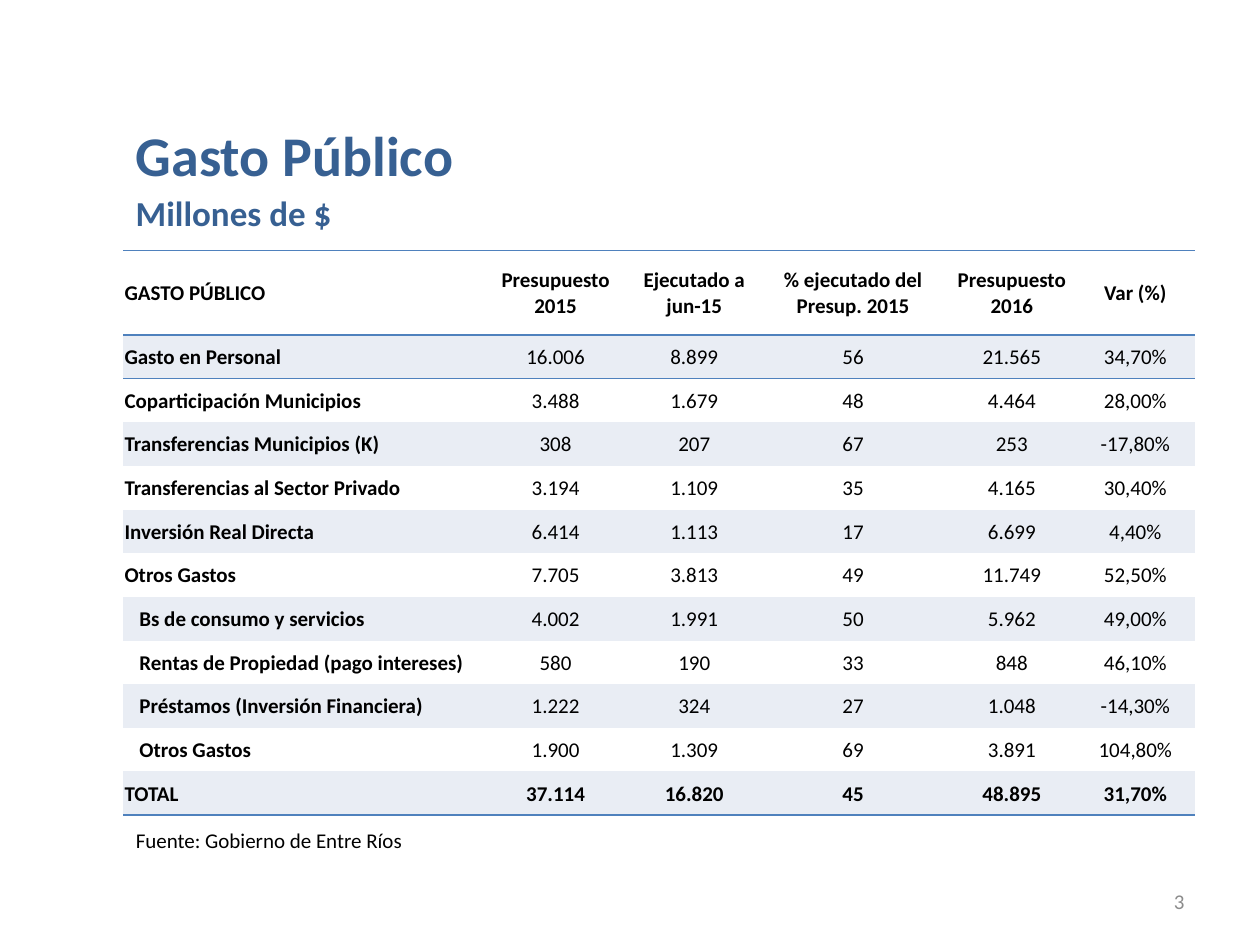
from lxml.etree import SubElement
from pptx import Presentation
from pptx.dml.color import RGBColor
from pptx.enum.text import MSO_ANCHOR as Anchor, MSO_AUTO_SIZE as AutoSize, PP_ALIGN as Align
from pptx.oxml.ns import qn
from pptx.util import Pt

FONT = "Calibri"
COLORS = {"heading": "376092", "text": "000000", "number": "8C8C8C",
          "rule": "4F81BD", "band": "E9EDF4"}
NO_STYLE_NO_GRID = "{2D5ABB26-0587-4C30-8999-92F81FD0307C}"
LEFT = 70.5
SUBITEM_INDENT = 8.5

COLUMN_WIDTHS = [204.5, 85, 73.5, 108, 73.5, 67.7]
HEADER_HEIGHT, ROW_HEIGHT = 48.2, 24.95
HEADERS = ["GASTO PÚBLICO", "Presupuesto 2015", "Ejecutado a jun-15",
           "% ejecutado del Presup. 2015", "Presupuesto 2016", "Var (%)"]
SPENDING = [
    ["Gasto en Personal", "16.006", "8.899", "56", "21.565", "34,70%"],
    ["Coparticipación Municipios", "3.488", "1.679", "48", "4.464", "28,00%"],
    ["Transferencias Municipios (K)", "308", "207", "67", "253", "-17,80%"],
    ["Transferencias al Sector Privado", "3.194", "1.109", "35", "4.165", "30,40%"],
    ["Inversión Real Directa", "6.414", "1.113", "17", "6.699", "4,40%"],
    ["Otros Gastos", "7.705", "3.813", "49", "11.749", "52,50%"],
]
OTHER_SPENDING = [
    ["Bs de consumo y servicios", "4.002", "1.991", "50", "5.962", "49,00%"],
    ["Rentas de Propiedad (pago intereses)", "580", "190", "33", "848", "46,10%"],
    ["Préstamos (Inversión Financiera)", "1.222", "324", "27", "1.048", "-14,30%"],
    ["Otros Gastos", "1.900", "1.309", "69", "3.891", "104,80%"],
]
TOTAL = ["TOTAL", "37.114", "16.820", "45", "48.895", "31,70%"]


def write(frame, text, size, color, bold=False, align=Align.LEFT):
    frame.text = text
    paragraph = frame.paragraphs[0]
    paragraph.alignment = align
    font = paragraph.font
    font.name, font.size, font.bold = FONT, Pt(size), bold
    font.color.rgb = RGBColor.from_string(COLORS[color])


def add_title(slide, text, left, top, width, height):
    title = slide.shapes.title
    title.left, title.top, title.width, title.height = map(Pt, (left, top, width, height))
    frame = title.text_frame
    frame.word_wrap = True
    frame.auto_size = AutoSize.NONE
    frame.vertical_anchor = Anchor.TOP
    write(frame, text, 32, "heading", bold=True)


def add_text(slide, text, box, size, color, bold=False, align=Align.LEFT, anchor=Anchor.TOP):
    frame = slide.shapes.add_textbox(*map(Pt, box)).text_frame
    frame.word_wrap = True
    frame.vertical_anchor = anchor
    write(frame, text, size, color, bold, align)


def set_rules(cell, sides):
    """Draw the named sides ("lnT", "lnB") of a cell; call before setting its fill."""
    properties = cell._tc.get_or_add_tcPr()
    for side in sides:
        line = SubElement(properties, qn(f"a:{side}"), w=str(Pt(1)))
        fill = SubElement(line, qn("a:solidFill"))
        SubElement(fill, qn("a:srgbClr"), val=COLORS["rule"])


def format_cell(cell, text, bold, align, indent, rules, banded):
    cell.vertical_anchor = Anchor.MIDDLE
    cell.margin_left = Pt(0.7 + indent)
    cell.margin_right = cell.margin_top = Pt(0.7)
    cell.margin_bottom = Pt(0)
    write(cell.text_frame, text, 12, "text", bold, align)
    set_rules(cell, rules)
    if banded:
        cell.fill.solid()
        cell.fill.fore_color.rgb = RGBColor.from_string(COLORS["band"])
    else:
        cell.fill.background()


def add_spending_table(slide, left, top):
    rows = [HEADERS, *SPENDING, *OTHER_SPENDING, TOTAL]
    last = len(rows) - 1
    first_subitem = 1 + len(SPENDING)
    heights = [HEADER_HEIGHT] + [ROW_HEIGHT] * last
    frame = slide.shapes.add_table(len(rows), len(HEADERS), Pt(left), Pt(top),
                                   Pt(sum(COLUMN_WIDTHS)), Pt(sum(heights)))
    table = frame.table
    table._tbl.tblPr.find(qn("a:tableStyleId")).text = NO_STYLE_NO_GRID
    table.horz_banding = False
    for column, width in zip(table.columns, COLUMN_WIDTHS):
        column.width = Pt(width)
    rules = {0: ["lnT", "lnB"], 1: ["lnT"], last: ["lnB"]}
    for r, (values, height) in enumerate(zip(rows, heights)):
        table.rows[r].height = Pt(height)
        for c, value in enumerate(values):
            is_label = c == 0
            is_subitem = is_label and first_subitem <= r < last
            format_cell(table.cell(r, c), value,
                        bold=is_label or r in (0, last),
                        align=Align.LEFT if is_label else Align.CENTER,
                        indent=SUBITEM_INDENT if is_subitem else 0,
                        rules=rules.get(r, []),
                        banded=r % 2 == 1)


def main():
    deck = Presentation()
    deck.slide_width, deck.slide_height = Pt(720), Pt(540)
    slide = deck.slides.add_slide(deck.slide_layouts[5])
    add_title(slide, "Gasto Público", LEFT, 65.5, 465, 46)
    add_text(slide, "Millones de $", (LEFT, 106, 465, 31.5), 20, "heading", bold=True)
    add_spending_table(slide, LEFT, 143.2)
    add_text(slide, "Fuente: Gobierno de Entre Ríos", (LEFT, 469.5, 439, 21.8), 12, "text")
    add_text(slide, "3", (516, 500.5, 168, 28.75), 12, "number",
             align=Align.RIGHT, anchor=Anchor.MIDDLE)
    deck.save("out.pptx")


if __name__ == "__main__":
    main()
